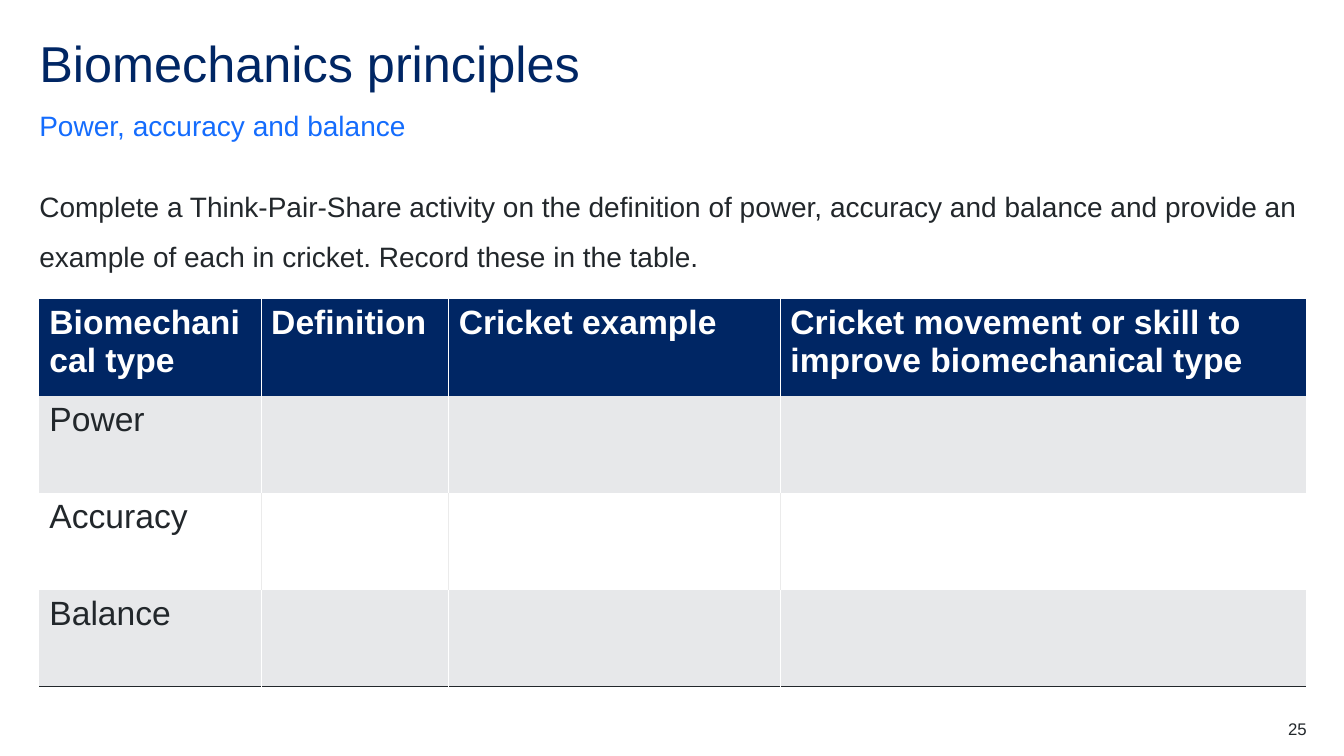
from lxml import etree
from pptx import Presentation
from pptx.dml.color import RGBColor
from pptx.enum.text import MSO_ANCHOR, PP_ALIGN
from pptx.oxml.ns import qn
from pptx.util import Inches, Pt

TOP, BOTTOM = MSO_ANCHOR.TOP, MSO_ANCHOR.BOTTOM
LEFT, RIGHT = PP_ALIGN.LEFT, PP_ALIGN.RIGHT

FONT = "Arial"
PLAIN = "{2D5ABB26-0587-4C30-8999-92F81FD0307C}"  # table style without grid
COLORS = {"navy": "002664", "blue": "146CFD", "ink": "22272B",
          "white": "FFFFFF", "band": "E7E8EA", "rule": "EBEBEB"}

EDGE, WIDE = 0.39, 12.56
BODY = {"line_spacing": 1.5, "space_after": Pt(12)}
TEXTS = [
    ("Biomechanics principles", (EDGE, 0.39, WIDE, 0.6), 36, "navy", TOP,
     {"line_spacing": 0.9}),
    ("Power, accuracy and balance", (EDGE, 1.07, WIDE, 0.34), 20, "blue", BOTTOM, BODY),
    ("Complete a Think-Pair-Share activity on the definition of power, accuracy "
     "and balance and provide an example of each in cricket. Record these in the table.",
     (EDGE, 1.71, WIDE, 0.96), 20, "ink", TOP, BODY),
    ("25", (12.17, 7.13, 0.79, 0.2), 12, "ink", TOP, {"alignment": RIGHT}),
]

HEADS = ["Biomechanical type", "Definition", "Cricket example",
         "Cricket movement or skill to improve biomechanical type"]
TYPES = ["Power", "Accuracy", "Balance"]
COLS = [2.2, 1.86, 3.29, 5.21]
GRID_TOP, ROW = 2.97, 0.96


def color(name):
    return RGBColor.from_string(COLORS[name])


def style(font, size, name, bold=False):
    for key, value in {"name": FONT, "size": Pt(size), "bold": bold}.items():
        setattr(font, key, value)
    font.color.rgb = color(name)


def add_text(slide, text, box, size, name, anchor, form):
    frame = slide.shapes.add_textbox(*map(Inches, box)).text_frame
    settings = {"word_wrap": True, "vertical_anchor": anchor, "margin_left": 0,
                "margin_right": 0, "margin_top": 0, "margin_bottom": 0}
    for key, value in settings.items():
        setattr(frame, key, value)
    para = frame.paragraphs[0]
    for key, value in {"alignment": LEFT, **form}.items():
        setattr(para, key, value)
    run = para.add_run()
    run.text = text
    style(run.font, size, name)


def add_edges(cell, edges):
    """Draw 1 pt borders; edges pairs a side (L, R, T, B) with a colour."""
    props = cell._tc.get_or_add_tcPr()
    for spot, (side, name) in enumerate(edges):
        line = etree.Element(qn("a:ln" + side), w=str(Pt(1)))
        fill = etree.SubElement(line, qn("a:solidFill"))
        etree.SubElement(fill, qn("a:srgbClr"), val=COLORS[name])
        props.insert(spot, line)


def add_grid(slide):
    rows = [HEADS] + [[kind] + [""] * (len(COLS) - 1) for kind in TYPES]
    table = slide.shapes.add_table(
        len(rows), len(COLS), Inches(EDGE), Inches(GRID_TOP),
        Inches(sum(COLS)), Inches(ROW * len(rows))).table
    table._tbl.tblPr.find(qn("a:tableStyleId")).text = PLAIN
    table.horz_banding = False
    for col, width in zip(table.columns, COLS):
        col.width = Inches(width)
    for r, row in enumerate(rows):
        table.rows[r].height = Inches(ROW)
        back = "navy" if r == 0 else "band" if r % 2 else "white"
        rule = "rule" if back == "white" else "white"
        for c, text in enumerate(row):
            cell = table.cell(r, c)
            cell.text = text
            style(cell.text_frame.paragraphs[0].font, 24,
                  "ink" if r else "white", r == 0)
            if text:
                style(cell.text_frame.paragraphs[0].runs[0].font, 24,
                      "ink" if r else "white", r == 0)
            cell.fill.solid()
            cell.fill.fore_color.rgb = color(back)
            edges = [("L", rule)] if c else []
            if c < len(COLS) - 1:
                edges.append(("R", rule))
            if r == len(rows) - 1:
                edges.append(("B", "ink"))
            add_edges(cell, edges)


def main():
    deck = Presentation()
    deck.slide_width, deck.slide_height = Inches(13.33), Inches(7.5)
    slide = deck.slides.add_slide(deck.slide_layouts[6])
    for item in TEXTS:
        add_text(slide, *item)
    add_grid(slide)
    deck.save("out.pptx")


if __name__ == "__main__":
    main()
